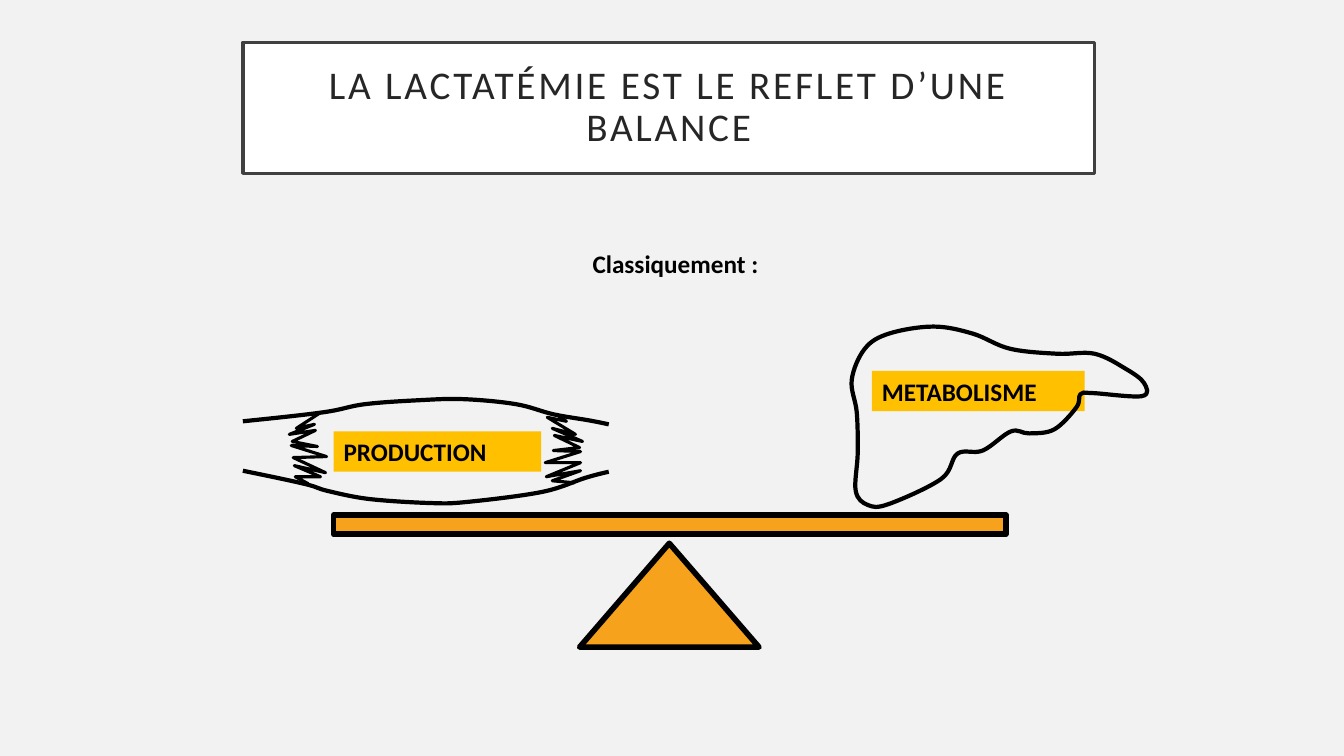
from pptx import Presentation
from pptx.dml.color import RGBColor
from pptx.enum.shapes import MSO_SHAPE
from pptx.enum.text import MSO_ANCHOR, MSO_AUTO_SIZE, PP_ALIGN
from pptx.oxml.ns import qn
from pptx.util import Pt
from lxml.etree import SubElement

PX = 9144  # 100 px to the inch
FONT = "Calibri"
COLORS = {"back": "F2F2F2", "panel": "FFFFFF", "frame": "404040", "title": "262626",
          "ink": "000000", "beam": "F6A21D", "label": "FFC000"}

# Outlines, as knots inside their boxes
FIBRES = [
    [(0, 22), (80, 13), (121, 5), (176, 1), (219, 0), (271, 5), (308, 15), (343, 21),
     (363, 25)],
    [(0, 71), (61, 84), (84, 91), (125, 99), (185, 103), (222, 102), (297, 92),
     (340, 78), (363, 72)],
]
TENDONS = [
    [(76, 14), (53, 29), (71, 25), (46, 35), (72, 31), (49, 42), (74, 47), (48, 46),
     (83, 57), (50, 58), (82, 73), (51, 66), (77, 77), (52, 77), (65, 84)],
    [(311, 15), (321, 22), (302, 18), (330, 35), (307, 29), (337, 42), (309, 36),
     (334, 48), (308, 51), (335, 52), (300, 63), (335, 63), (301, 77), (335, 71),
     (307, 81), (329, 83)],
]
LIVER = [(38, 7), (82, 0), (121, 7), (158, 22), (205, 27), (242, 27), (273, 42),
         (291, 56), (289, 69), (240, 66), (228, 67), (224, 80), (202, 102), (177, 106),
         (159, 104), (131, 123), (106, 126), (90, 151), (38, 176), (17, 177), (5, 163),
         (7, 125), (6, 85), (1, 53), (14, 22), (38, 7)]


def color(name):
    return RGBColor.from_string(COLORS[name])


def scale(box):
    return [n * PX for n in box]


def paint(shape, fill=None, line=None, width=0):
    shape.shadow.inherit = False
    if fill:
        shape.fill.solid()
        shape.fill.fore_color.rgb = color(fill)
    else:
        shape.fill.background()
    if line:
        shape.line.color.rgb = color(line)
        shape.line.width = Pt(width)
    else:
        shape.line.fill.background()


def write(para, text, size, ink, bold=False):
    run = para.add_run()
    run.text = text
    run.font.name = FONT
    run.font.size = Pt(size)
    run.font.bold = bold
    run.font.color.rgb = color(ink)
    return run


def bend(shape, closed):
    """Turn straight segments into a smooth curve through the same knots."""
    nodes = shape._element.xpath(".//a:pt")
    knots = [(int(p.get("x")), int(p.get("y"))) for p in nodes]
    last = len(knots) - 1

    def slope(i):
        if closed and i in (0, last):
            before, after = knots[-2], knots[1]
        else:
            before, after = knots[max(i - 1, 0)], knots[min(i + 1, last)]
        return [(b - a) / 6 for a, b in zip(before, after)]

    for i, seg in enumerate(shape._element.xpath(".//a:lnTo")):
        start, end = knots[i], knots[i + 1]
        one = [a + d for a, d in zip(start, slope(i))]
        two = [b - d for b, d in zip(end, slope(i + 1))]
        if not closed and i == 0:
            one = [(a + b) / 2 for a, b in zip(start, two)]
        if not closed and i + 1 == last:
            two = [(a + b) / 2 for a, b in zip(one, end)]
        curve = SubElement(seg.getparent(), qn("a:cubicBezTo"))
        for x, y in (one, two, end):
            SubElement(curve, qn("a:pt"), x=str(round(x)), y=str(round(y)))
        seg.getparent().replace(seg, curve)


def trace(shapes, box, knots, width, smooth=True):
    left, top = box[:2]
    spots = [((left + x) * PX, (top + y) * PX) for x, y in knots]
    closed = knots[0] == knots[-1]
    pen = shapes.build_freeform(*spots[0])
    pen.add_line_segments(spots[1:], close=closed)
    shape = pen.convert_to_shape()
    paint(shape, None, "ink", width)
    if smooth:
        bend(shape, closed)


def add_title(slide, box, text):
    title = slide.shapes.title
    title.left, title.top, title.width, title.height = scale(box)
    paint(title, "panel", "frame", 2.5)
    frame = title.text_frame
    frame.word_wrap = True
    frame.auto_size = MSO_AUTO_SIZE.NONE
    frame.vertical_anchor = MSO_ANCHOR.MIDDLE
    frame.margin_left = frame.margin_right = 20 * PX
    frame.margin_top = frame.margin_bottom = 20 * PX
    para = frame.paragraphs[0]
    para.alignment = PP_ALIGN.CENTER
    para.line_spacing = 0.9
    run = write(para, text, 28, "title")
    run.font._element.set("spc", "200")


def add_label(slide, box, text, fill=None):
    label = slide.shapes.add_textbox(*scale(box))
    paint(label, fill)
    label.text_frame.word_wrap = True
    write(label.text_frame.paragraphs[0], text, 18, "ink", True)


def add_scale(slide, box):
    left, top, width, height = box
    base, rise = 178, 103
    parts = [
        (MSO_SHAPE.ISOSCELES_TRIANGLE,
         (left + (width - base) // 2, top + height - rise, base, rise)),
        (MSO_SHAPE.RECTANGLE, (left, top, width, 19)),
    ]
    for kind, place in parts:
        paint(slide.shapes.add_shape(kind, *scale(place)), "beam", "ink", 4)


def add_muscle(slide, box):
    group = slide.shapes.add_group_shape()
    for knots in FIBRES:
        trace(group.shapes, box, knots, 3)
    for knots in TENDONS:
        trace(group.shapes, box, knots, 2.25, smooth=False)


def add_liver(slide, box):
    trace(slide.shapes, box, LIVER, 3)


def main():
    deck = Presentation()
    deck.slide_width, deck.slide_height = 12192000, 750 * PX
    slide = deck.slides.add_slide(deck.slide_layouts[5])
    slide.background.fill.solid()
    slide.background.fill.fore_color.rgb = color("back")

    add_title(slide, (241, 42, 845, 130), "LA LACTATÉMIE EST LE REFLET D’UNE BALANCE")
    # Balance and its two sides
    add_scale(slide, (331, 511, 667, 131))
    add_label(slide, (331, 428, 206, 40), "PRODUCTION", "label")
    add_label(slide, (865, 368, 211, 40), "METABOLISME", "label")
    add_muscle(slide, (241, 396, 363, 103))
    add_liver(slide, (844, 324, 294, 178))
    # Lead-in
    add_label(slide, (578, 241, 208, 40), "Classiquement :")
    deck.save("out.pptx")


if __name__ == "__main__":
    main()
